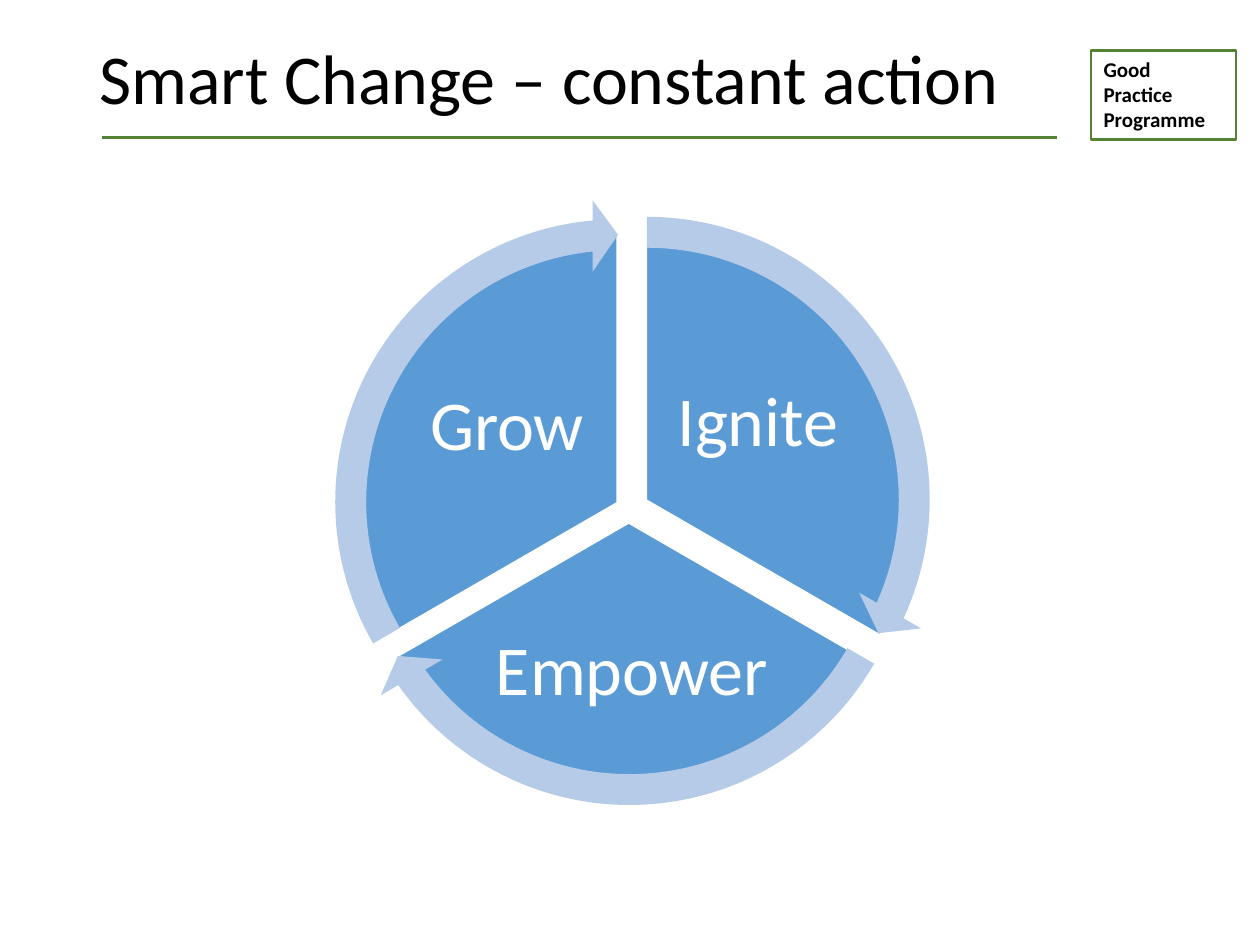
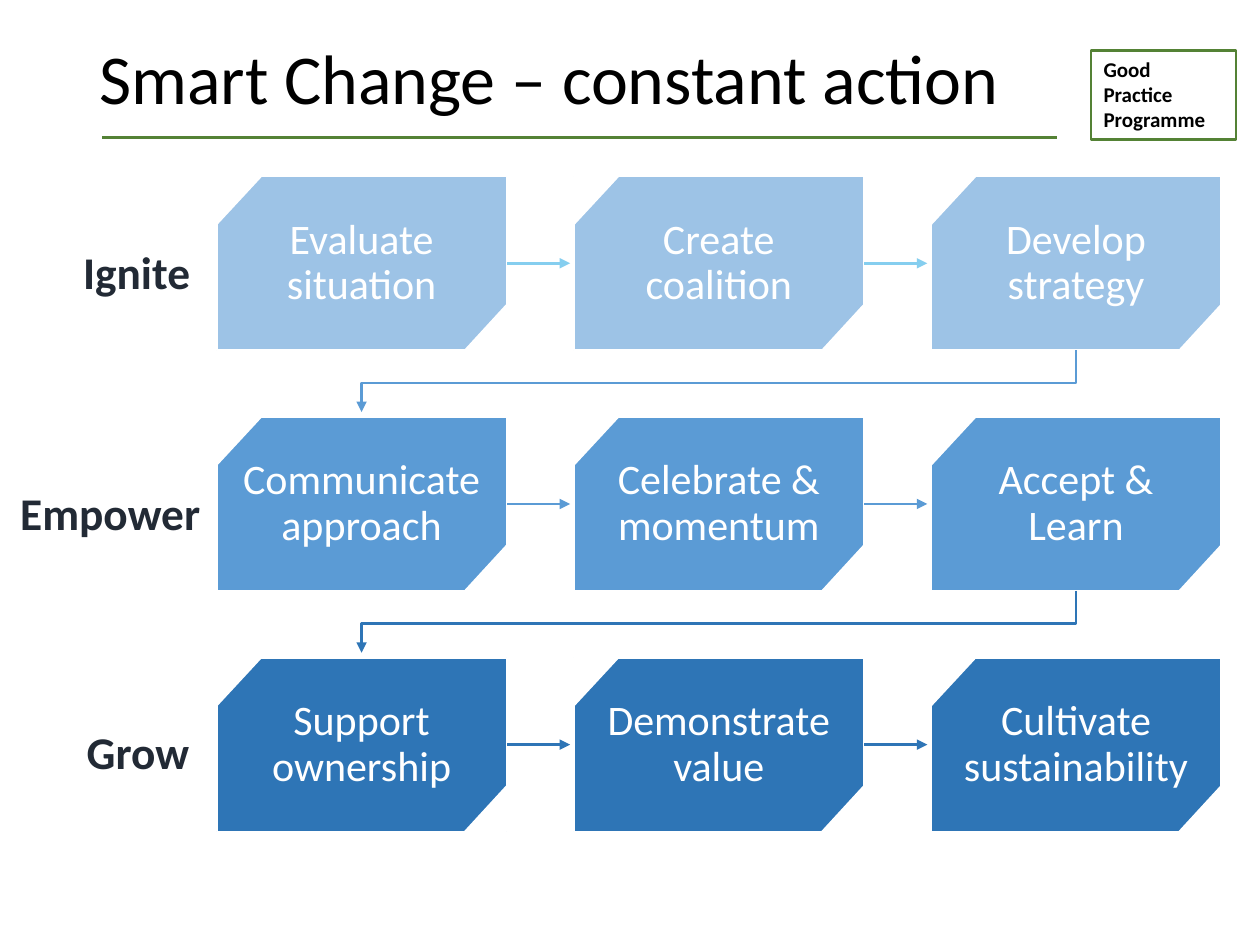
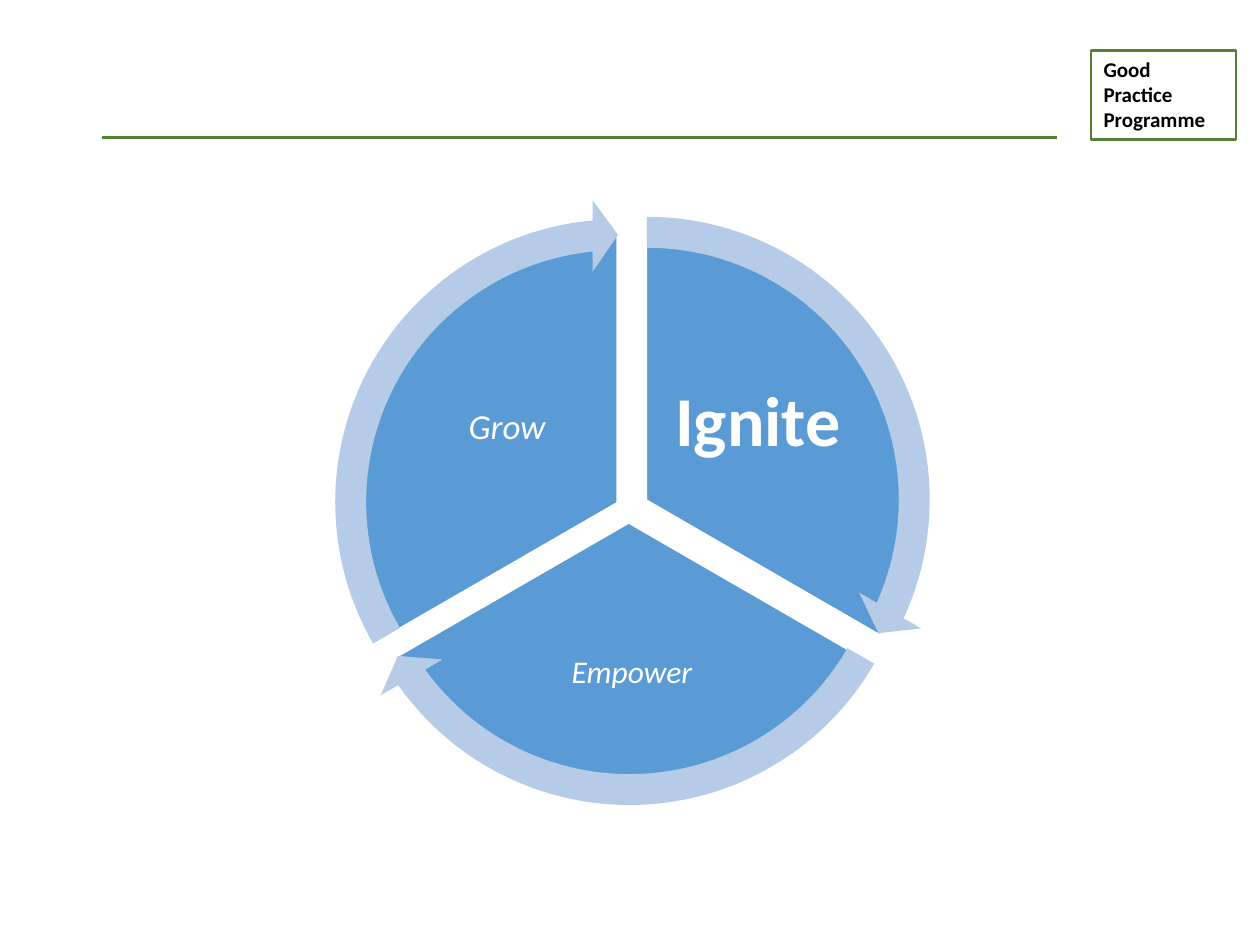
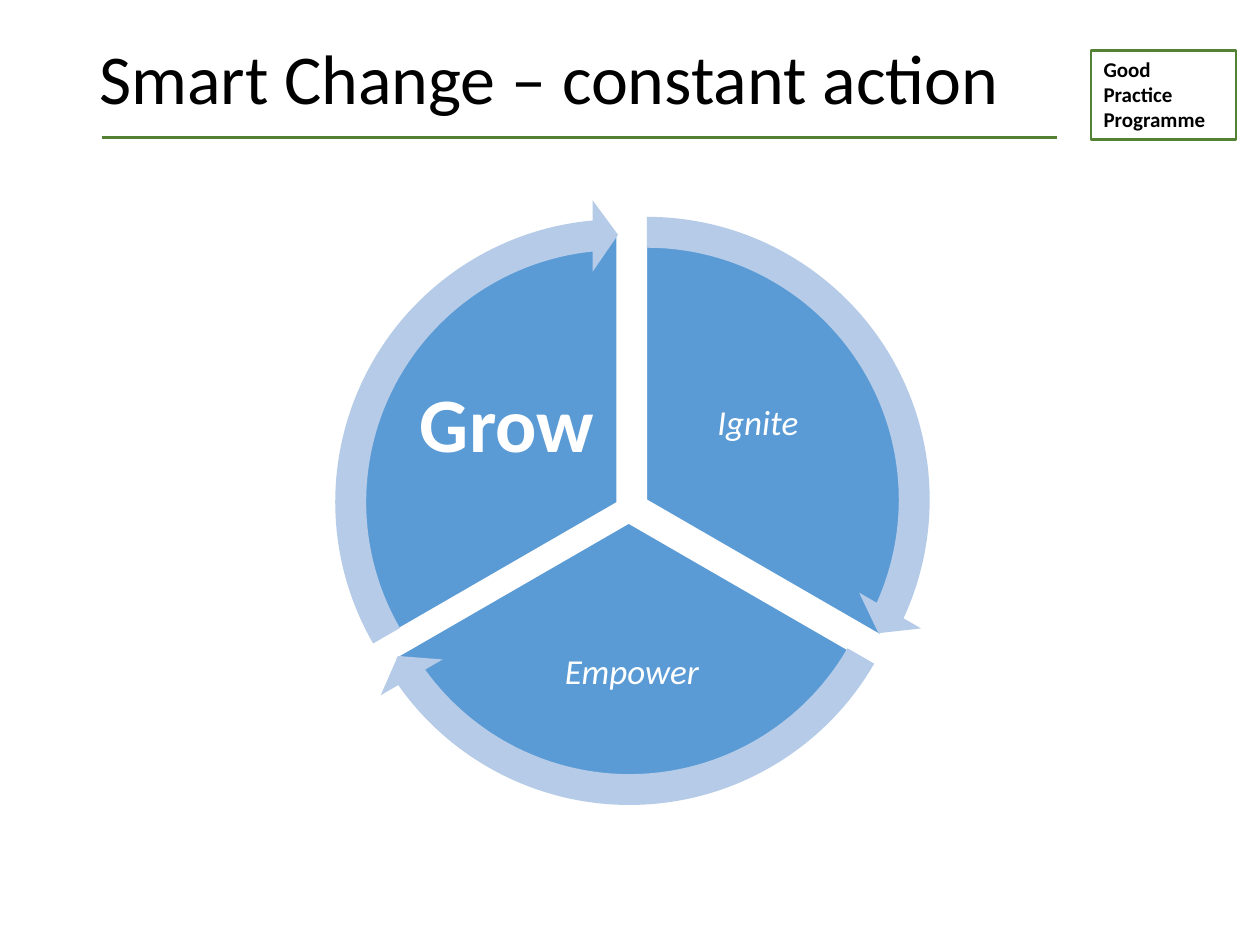
from lxml import etree
from pptx import Presentation
from pptx import util as u
from pptx.dml.color import RGBColor
from pptx.enum import shapes, text
from pptx.oxml import ns

COLORS = {"green": "548235", "blue": "5B9BD5", "light": "9DC3E6", "dark": "2E75B6",
          "sky": "85CEEF", "ring": "B5CBE7", "label": "222A35",
          "white": "FFFFFF", "black": "000000"}
FONT = "Calibri"
TITLE = "Smart Change – constant action"
BADGE = "Good Practice Programme"

SECTORS = [
    {"name": "Ignite", "pie": (2.99, 1.83), "angles": (162, 18),
     "caption": (5.25, 2.73, 1.53, 1.27), "arrow": (14.725, 161.994)},
    {"name": "Empower", "pie": (2.85, 2.01), "angles": (18, 90),
     "caption": (3.87, 4.78, 2.29, 1.12), "arrow": (86.72, 18.005)},
    {"name": "Grow", "pie": (2.76, 1.85), "angles": (90, 162),
     "caption": (3.26, 2.76, 1.53, 1.27), "arrow": (158.73, 90)},
]
PIE_SIZE = 4.28
RING_SIZE = 4.81
RING_OFFSET = (-0.26, -0.27)

PLAIN = {"size": 40}
SMALL = {"size": 20, "italic": True}
CYCLE_STYLES = {
    "overview": {"Ignite": PLAIN, "Empower": PLAIN, "Grow": PLAIN},
    "ignite": {"Ignite": {"size": 40, "bold": True},
               "Empower": {"size": 18, "italic": True}, "Grow": SMALL},
    "grow": {"Ignite": SMALL, "Empower": SMALL, "Grow": {"size": 44, "bold": True}},
}

STAGES = [
    ("Ignite", "light", "sky", (0.26, 1.89),
     ["Evaluate situation", "Create coalition", "Develop strategy"]),
    ("Empower", "blue", "blue", (0.05, 3.8),
     ["Communicate approach", "Celebrate & momentum", "Accept & Learn"]),
    ("Grow", "dark", "dark", (0.27, 5.7),
     ["Support ownership", "Demonstrate value", "Cultivate sustainability"]),
]
CARD_LEFT, CARD_TOP = 1.72, 1.4
CARD_WIDTH, CARD_HEIGHT = 2.3, 1.38
COLUMN_STEP, ROW_STEP = 2.835, 1.91
CORNERS = [(-0.02, 0, 0.41, 0.38, 90), (1.95, 1.02, 0.37, 0.34, 270)]


def color(name):
    return RGBColor.from_string(COLORS[name])


def box(*lengths):
    return [u.Inches(length) for length in lengths]


def add_figure(slide, kind, area, fill=None, line=None, width=1):
    shape = slide.shapes.add_shape(kind, *box(*area))
    shape.shadow.inherit = False
    if fill:
        shape.fill.solid()
        shape.fill.fore_color.rgb = color(fill)
    else:
        shape.fill.background()
    if line:
        shape.line.color.rgb = color(line)
        shape.line.width = u.Pt(width)
    else:
        shape.line.fill.background()
    return shape


def write(shape, content, size, ink, bold=False, italic=False, align="CENTER",
          anchor="MIDDLE", inset=None, spacing=None):
    frame = shape.text_frame
    frame.word_wrap = True
    frame.vertical_anchor = text.MSO_ANCHOR[anchor]
    if inset is not None:
        frame.margin_left = frame.margin_right = u.Inches(inset)
        frame.margin_top = frame.margin_bottom = u.Inches(inset)
    paragraph = frame.paragraphs[0]
    paragraph.text = content
    paragraph.alignment = text.PP_ALIGN[align]
    if spacing:
        paragraph.line_spacing = spacing
    font = paragraph.font
    font.name, font.size = FONT, u.Pt(size)
    font.bold, font.italic = bold, italic
    font.color.rgb = color(ink)


def add_text(slide, area, content, size, ink, **style):
    write(slide.shapes.add_textbox(*box(*area)), content, size, ink, **style)


def style_line(shape, name, arrow=False):
    shape.line.color.rgb = color(name)
    shape.line.width = u.Pt(1.5)
    if arrow:
        etree.SubElement(shape.line._get_or_add_ln(), ns.qn("a:tailEnd"), type="triangle")


def add_line(slide, start, end, name, arrow=False):
    connector = slide.shapes.add_connector(shapes.MSO_CONNECTOR.STRAIGHT, *box(*start, *end))
    style_line(connector, name, arrow)
    etree.SubElement(connector._element.spPr, ns.qn("a:effectLst"))


def add_bent_arrow(slide, points, name):
    start, *rest = [tuple(box(*point)) for point in points]
    builder = slide.shapes.build_freeform(*start)
    builder.add_line_segments(rest, close=False)
    shape = builder.convert_to_shape()
    shape.fill.background()
    style_line(shape, name, arrow=True)
    shape.shadow.inherit = False


def new_slide(presentation):
    slide = presentation.slides.add_slide(presentation.slide_layouts[6])
    badge = add_figure(slide, shapes.MSO_SHAPE.RECTANGLE, (8.66, 0.4, 1.15, 0.71),
                       line="green", width=1.5)
    write(badge, BADGE, 12, "black", bold=True, align="LEFT", anchor="TOP")
    add_line(slide, (0.81, 1.09), (8.39, 1.09), "green")
    return slide


def add_title(slide):
    add_text(slide, (0.69, 0.21, 7.87, 0.88), TITLE, 40, "black", align="LEFT", spacing=0.9)


def adjust(shape, values):
    for index, value in enumerate(values):
        shape.adjustments[index] = value


def draw_cycle(slide, styles):
    for sector in SECTORS:
        pie = add_figure(slide, shapes.MSO_SHAPE.PIE, (*sector["pie"], PIE_SIZE, PIE_SIZE),
                         "blue", "white")
        adjust(pie, sector["angles"])
        style = styles[sector["name"]]
        add_text(slide, sector["caption"], sector["name"], ink="white", spacing=0.9,
                 inset=0.06 if style["size"] >= 40 else 0.03, **style)
    for sector in SECTORS:
        left, top = (place + shift for place, shift in zip(sector["pie"], RING_OFFSET))
        ring = add_figure(slide, shapes.MSO_SHAPE.CIRCULAR_ARROW,
                          (left, top, RING_SIZE, RING_SIZE), "ring")
        adjust(ring, (0.051, 3.275, *sector["arrow"], 0.059))


def draw_card(slide, left, top, content, fill):
    card = add_figure(slide, shapes.MSO_SHAPE.RECTANGLE,
                      (left, top, CARD_WIDTH, CARD_HEIGHT), fill, "white")
    write(card, content, 24, "white", inset=0.19, spacing=0.9)
    for shift_x, shift_y, width, height, angle in CORNERS:
        corner = add_figure(slide, shapes.MSO_SHAPE.RIGHT_TRIANGLE,
                            (left + shift_x, top + shift_y, width, height), "white")
        corner.rotation = angle


def draw_stages(slide):
    first_center = CARD_LEFT + CARD_WIDTH / 2
    last_center = first_center + 2 * COLUMN_STEP
    for row, (name, fill, arrow, place, steps) in enumerate(STAGES):
        top = CARD_TOP + row * ROW_STEP
        middle = top + CARD_HEIGHT / 2
        for column, step in enumerate(steps):
            left = CARD_LEFT + column * COLUMN_STEP
            draw_card(slide, left, top, step, fill)
            if column:
                add_line(slide, (left - 0.53, middle), (left - 0.03, middle), arrow, arrow=True)
        if row:
            add_bent_arrow(slide, [(last_center, top - 0.53), (last_center, top - 0.27),
                                   (first_center, top - 0.27), (first_center, top - 0.04)],
                           fill)
        add_text(slide, (*place, 1.65, 0.54), name, 25.9, "label", bold=True, anchor="TOP")


def main():
    presentation = Presentation()
    presentation.slide_width, presentation.slide_height = box(10, 7.5)

    slide = new_slide(presentation)
    draw_cycle(slide, CYCLE_STYLES["overview"])
    add_title(slide)

    slide = new_slide(presentation)
    draw_stages(slide)
    add_title(slide)

    slide = new_slide(presentation)
    draw_cycle(slide, CYCLE_STYLES["ignite"])

    slide = new_slide(presentation)
    draw_cycle(slide, CYCLE_STYLES["grow"])
    add_title(slide)

    presentation.save("out.pptx")


if __name__ == "__main__":
    main()
